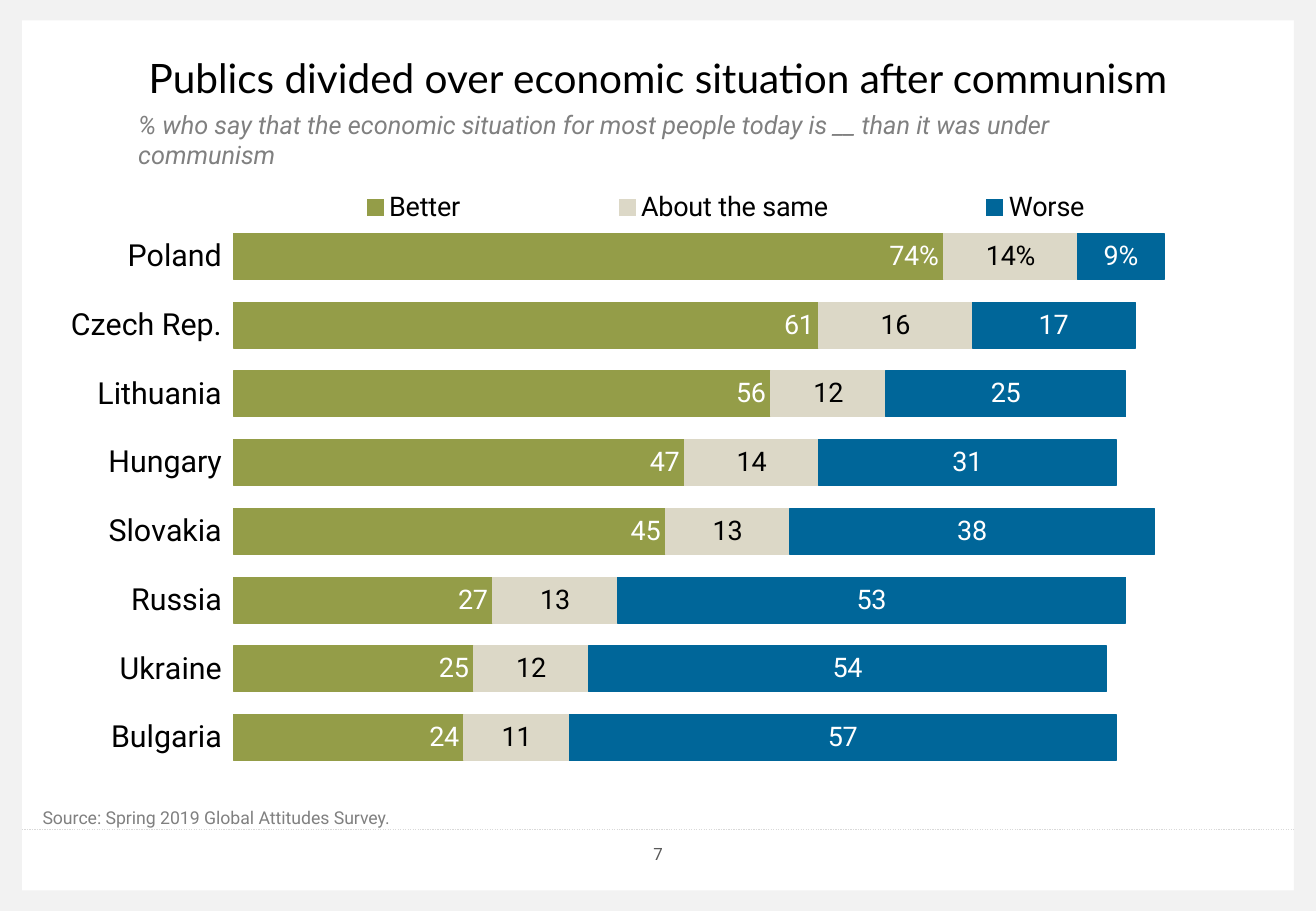
from lxml import etree
from pptx import Presentation
from pptx.chart.data import CategoryChartData
from pptx.dml.color import RGBColor
from pptx.enum.chart import XL_CHART_TYPE as ChartType
from pptx.enum.chart import XL_LABEL_POSITION as LabelPos
from pptx.enum.chart import XL_LEGEND_POSITION as LegendPos
from pptx.enum.chart import XL_TICK_LABEL_POSITION as TickLabelPos
from pptx.enum.chart import XL_TICK_MARK as TickMark
from pptx.enum.dml import MSO_LINE
from pptx.enum.shapes import MSO_CONNECTOR, MSO_SHAPE
from pptx.enum.text import MSO_ANCHOR as Anchor
from pptx.enum.text import PP_ALIGN as Align
from pptx.oxml import parse_xml
from pptx.oxml.ns import nsdecls, qn
from pptx.util import Cm, Pt

WIDTH, HEIGHT = 27.51, 19.05
SIDE, EDGE = 0.46, 0.43
COUNTRIES = ["Poland", "Czech Rep.", "Lithuania", "Hungary",
             "Slovakia", "Russia", "Ukraine", "Bulgaria"]
# answer, shares by country, bar colour, label colour, label position
ANSWERS = [
    ("Better", [74, 61, 56, 47, 45, 27, 25, 24], "949D48", "FFFFFF", LabelPos.INSIDE_END),
    ("About the same", [14, 16, 12, 14, 13, 13, 12, 11], "DCD8C7", "000000", LabelPos.CENTER),
    ("Worse", [9, 17, 25, 31, 38, 53, 54, 57], "006699", "FFFFFF", LabelPos.CENTER),
]


def rgb(color):
    return RGBColor.from_string(color)


def set_font(font, size, color, name="Roboto"):
    font.size, font.name = Pt(size), name
    font.color.rgb = rgb(color)


def add_text(slide, box, text, size, color, name="Roboto",
             align=Align.LEFT, anchor=Anchor.TOP, italic=False):
    frame = slide.shapes.add_textbox(*map(Cm, box)).text_frame
    frame.word_wrap = True
    frame.vertical_anchor = anchor
    paragraph = frame.paragraphs[0]
    paragraph.alignment = align
    run = paragraph.add_run()
    run.text = text
    set_font(run.font, size, color, name)
    run.font.italic = italic


def add_border(slide, left, top, width, height):
    bands = [
        (left, top, SIDE, height),
        (left + width - SIDE, top, SIDE, height),
        (left, top, width, EDGE),
        (left, top + height - EDGE, width, EDGE),
    ]
    for box in bands:
        band = slide.shapes.add_shape(MSO_SHAPE.RECTANGLE, *map(Cm, box))
        band.shadow.inherit = False
        band.fill.solid()
        band.fill.fore_color.rgb = rgb("F2F2F2")
        band.line.fill.background()


def add_heading(slide, left, top, width):
    add_text(slide, (left, top, width, 1.85),
             "Publics divided over economic situation after communism",
             24, "000000", "Lato", Align.CENTER, Anchor.MIDDLE)
    add_text(slide, (left + 1.27, top + 1.47, width - 2.54, 1.5),
             "% who say that the economic situation for most people today is __ "
             "than it was under communism", 15, "808080", italic=True)


def add_footer(slide, left, top, width):
    """Source above a dotted rule at top, page number below it."""
    rule = slide.shapes.add_connector(
        MSO_CONNECTOR.STRAIGHT, Cm(left), Cm(top), Cm(left + width), Cm(top))
    rule.line.color.rgb = rgb("D9D9D9")
    rule.line.width = Pt(0.75)
    rule.line.dash_style = MSO_LINE.ROUND_DOT
    etree.SubElement(rule._element.spPr, qn("a:effectLst"))
    add_text(slide, (left + 0.18, top - 0.61, 20.85, 0.58),
             "Source: Spring 2019 Global Attitudes Survey.", 10.5, "808080")
    add_text(slide, (left + width / 2 - 1.6, top, 3.2, 1.02), "7",
             10, "595959", align=Align.CENTER, anchor=Anchor.MIDDLE)


def chart_layout(x, y, w, h, inner=False):
    """Manual layout in fractions of the chart area."""
    target = '<c:layoutTarget val="inner"/>' if inner else ""
    return parse_xml(
        f'<c:layout {nsdecls("c")}><c:manualLayout>{target}'
        '<c:xMode val="edge"/><c:yMode val="edge"/>'
        f'<c:x val="{x}"/><c:y val="{y}"/><c:w val="{w}"/><c:h val="{h}"/>'
        '</c:manualLayout></c:layout>')


def style_answer(series, bar_color, label_color, position):
    for part in (series.format.fill, series.format.line.fill):
        part.solid()
        part.fore_color.rgb = rgb(bar_color)
    series.format.line.width = Pt(0.75)
    labels = series.data_labels
    labels.show_value = True
    labels.number_format, labels.number_format_is_linked = "0", False
    labels.position = position
    set_font(labels.font, 16, label_color)
    first_label = series.points[0].data_label
    run = first_label.text_frame.paragraphs[0].add_run()
    run.text = f"{series.values[0]:.0f}%"
    set_font(run.font, 16, label_color)
    first_label.position = position


def add_opinion_chart(slide, left, top, width, height):
    data = CategoryChartData()
    data.categories = COUNTRIES
    for name, shares, *_ in ANSWERS:
        data.add_series(name, shares)
    chart = slide.shapes.add_chart(
        ChartType.BAR_STACKED, *map(Cm, (left, top, width, height)), data).chart
    set_font(chart.font, 10, "000000")
    chart.has_title = False

    plot = chart.plots[0]
    plot.gap_width, plot.overlap, plot.vary_by_categories = 50, 100, False
    for series, (_, _, *style) in zip(plot.series, ANSWERS):
        style_answer(series, *style)

    countries = chart.category_axis
    countries.reverse_order = True
    countries.major_tick_mark = TickMark.NONE
    countries.tick_label_position = TickLabelPos.LOW
    countries.format.line.fill.background()
    set_font(countries.tick_labels.font, 18, "000000")
    shares_axis = chart.value_axis
    shares_axis.minimum_scale, shares_axis.maximum_scale = 0, 97
    shares_axis.has_major_gridlines = False
    shares_axis.visible = False

    chart.has_legend = True
    legend = chart.legend
    legend.position = LegendPos.TOP
    legend.include_in_layout = False
    set_font(legend.font, 16, "000000")
    legend._element.find(qn("c:legendPos")).addnext(chart_layout(0.13, 0.02, 0.87, 0.06))
    plot_area = plot._element.getparent()
    for automatic in plot_area.findall(qn("c:layout")):
        plot_area.remove(automatic)
    plot_area.insert(0, chart_layout(0.144, 0.075, 0.796, 0.924, inner=True))


def main():
    deck = Presentation()
    deck.slide_width, deck.slide_height = Cm(WIDTH), Cm(HEIGHT)
    slide = deck.slides.add_slide(deck.slide_layouts[6])
    add_border(slide, 0, 0, WIDTH, HEIGHT)
    add_heading(slide, 1.37, 0.69, 24.77)
    add_footer(slide, SIDE, 17.35, WIDTH - 2 * SIDE)
    add_opinion_chart(slide, 1.37, 3.71, 24.43, 12.45)
    deck.save("out.pptx")


if __name__ == "__main__":
    main()
